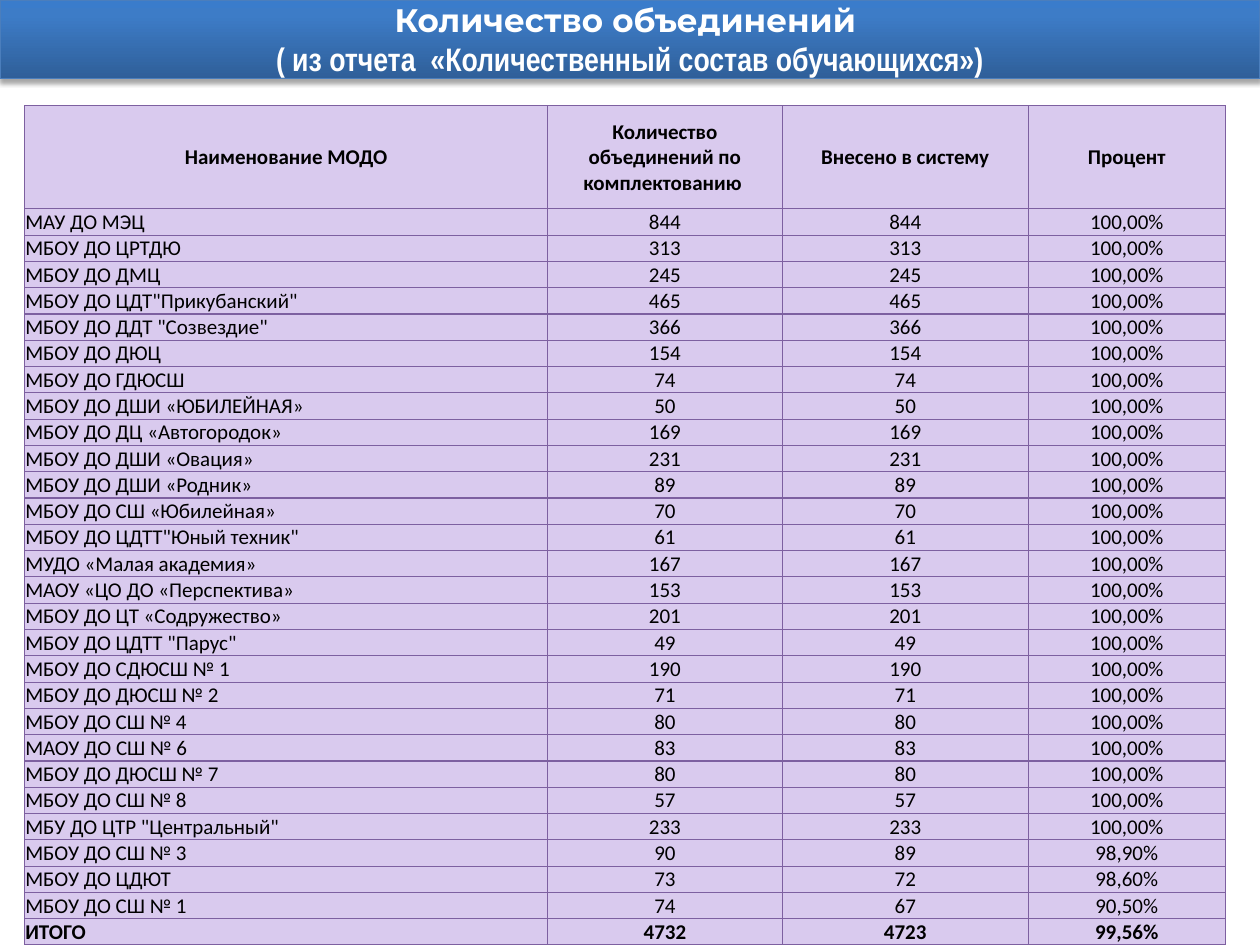
from typing import NamedTuple

from lxml import etree
from pptx import Presentation
from pptx.dml.color import RGBColor
from pptx.enum.text import MSO_ANCHOR, MSO_AUTO_SIZE, PP_ALIGN
from pptx.oxml import parse_xml
from pptx.oxml.ns import nsdecls, qn
from pptx.util import Cm, Pt

LEFT, CENTER = PP_ALIGN.LEFT, PP_ALIGN.CENTER
MIDDLE, BOTTOM = MSO_ANCHOR.MIDDLE, MSO_ANCHOR.BOTTOM
NO_AUTOFIT = MSO_AUTO_SIZE.NONE

WHITE = RGBColor(0xFF, 0xFF, 0xFF)
BLACK = RGBColor(0x00, 0x00, 0x00)
BANNER_LINE = RGBColor(0x4B, 0x7E, 0xBC)
BANNER_DARK = RGBColor(0x2F, 0x5F, 0x99)
BANNER_MID = RGBColor(0x3D, 0x7C, 0xC7)
BANNER_LIGHT = RGBColor(0x3A, 0x7C, 0xCB)
CELL_FILL = RGBColor(0xD9, 0xCA, 0xEE)
CELL_BORDER = RGBColor(0x7D, 0x60, 0xA0)

TITLE_LINES = [
    ("Количество объединений ", "Montserrat"),
    ("( из отчета  «Количественный состав обучающихся»)", "Arial Narrow"),
]
HEADERS = ("Наименование МОДО", "Количество объединений по комплектованию ",
           "Внесено в систему", "Процент")
COLUMN_WIDTHS = (10.54, 4.73, 4.96, 3.97)
HEADER_HEIGHT, ROW_HEIGHT = 2.08, 0.53


class Institution(NamedTuple):
    name: str
    planned: int
    entered: int
    percent: str = "100,00%"


def complete(name: str, count: int) -> Institution:
    """An institution whose groups have all been entered."""
    return Institution(name, count, count)


INSTITUTIONS = [
    complete("МАУ ДО МЭЦ", 844),
    complete("МБОУ ДО ЦРТДЮ", 313),
    complete("МБОУ ДО ДМЦ", 245),
    complete('МБОУ ДО ЦДТ"Прикубанский"', 465),
    complete('МБОУ ДО ДДТ "Созвездие"', 366),
    complete("МБОУ ДО ДЮЦ", 154),
    complete("МБОУ ДО ГДЮСШ", 74),
    complete("МБОУ ДО ДШИ «ЮБИЛЕЙНАЯ»", 50),
    complete("МБОУ ДО ДЦ «Автогородок»", 169),
    complete("МБОУ ДО ДШИ «Овация»", 231),
    complete("МБОУ ДО ДШИ «Родник»", 89),
    complete("МБОУ ДО СШ «Юбилейная»", 70),
    complete('МБОУ ДО ЦДТТ"Юный техник"', 61),
    complete("МУДО «Малая академия»", 167),
    complete("МАОУ «ЦО ДО «Перспектива»", 153),
    complete("МБОУ ДО ЦТ «Содружество»", 201),
    complete('МБОУ ДО ЦДТТ "Парус"', 49),
    complete("МБОУ ДО СДЮСШ № 1", 190),
    complete("МБОУ ДО ДЮСШ № 2", 71),
    complete("МБОУ ДО СШ № 4", 80),
    complete("МАОУ ДО СШ № 6", 83),
    complete("МБОУ ДО ДЮСШ № 7", 80),
    complete("МБОУ ДО СШ № 8", 57),
    complete('МБУ ДО ЦТР "Центральный"', 233),
    Institution("МБОУ ДО СШ № 3", 90, 89, "98,90%"),
    Institution("МБОУ ДО ЦДЮТ", 73, 72, "98,60%"),
    Institution("МБОУ ДО СШ № 1", 74, 67, "90,50%"),
]
TOTAL = Institution("ИТОГО", 4732, 4723, "99,56%")


def apply_format(target, values: dict) -> None:
    for attribute, value in values.items():
        setattr(target, attribute, value)


def write_run(paragraph, text: str, font_name: str, size: float,
              color: RGBColor, bold: bool) -> None:
    run = paragraph.add_run()
    run.text = text
    apply_format(run.font, {"name": font_name, "size": Pt(size), "bold": bold})
    run.font.color.rgb = color


def style_banner(banner) -> None:
    """Give the title its outline, gradient and soft shadow."""
    banner.line.color.rgb = BANNER_LINE
    banner.line.width = Pt(0.75)
    stops = "".join(
        f'<a:gs pos="{position * 1000}"><a:srgbClr val="{color}"/></a:gs>'
        for position, color in ((0, BANNER_DARK), (80, BANNER_MID), (100, BANNER_LIGHT)))
    properties = banner.element.spPr
    properties.find(qn("a:ln")).addprevious(parse_xml(
        f'<a:gradFill {nsdecls("a")} rotWithShape="1"><a:gsLst>{stops}</a:gsLst>'
        '<a:lin ang="16200000" scaled="0"/></a:gradFill>'))
    properties.append(parse_xml(
        f'<a:effectLst {nsdecls("a")}><a:outerShdw blurRad="{Pt(3.1)}" dist="{Pt(1.8)}" '
        'dir="5400000" rotWithShape="0"><a:srgbClr val="000000"><a:alpha val="35000"/>'
        '</a:srgbClr></a:outerShdw></a:effectLst>'))


def draw_title(title) -> None:
    apply_format(title, {"left": Cm(0), "top": Cm(0),
                         "width": Cm(25.4), "height": Cm(1.58)})
    style_banner(title)
    frame = title.text_frame
    apply_format(frame, {"auto_size": NO_AUTOFIT, "word_wrap": True,
                         "margin_top": Cm(0), "margin_bottom": Cm(0),
                         "vertical_anchor": MIDDLE})
    for index, (text, font_name) in enumerate(TITLE_LINES):
        paragraph = frame.add_paragraph() if index else frame.paragraphs[0]
        paragraph.alignment = CENTER
        write_run(paragraph, text, font_name, 18.6, WHITE, True)


def add_borders(cell) -> None:
    properties = cell._tc.get_or_add_tcPr()
    for position, side in enumerate(("lnL", "lnR", "lnT", "lnB")):
        border = etree.Element(qn(f"a:{side}"), w=str(Pt(0.75)))
        fill = etree.SubElement(border, qn("a:solidFill"))
        etree.SubElement(fill, qn("a:srgbClr"), val=str(CELL_BORDER))
        properties.insert(position, border)


def fill_cell(cell, text: str, alignment, anchor, bold: bool) -> None:
    apply_format(cell, {"margin_left": Cm(0.01), "margin_right": Cm(0.01),
                        "margin_top": Cm(0.01), "margin_bottom": Cm(0),
                        "vertical_anchor": anchor})
    cell.fill.solid()
    cell.fill.fore_color.rgb = CELL_FILL
    add_borders(cell)
    paragraph = cell.text_frame.paragraphs[0]
    paragraph.alignment = alignment
    write_run(paragraph, text, "Calibri", 12, BLACK, bold)


def draw_table(slide) -> None:
    rows = [HEADERS, *INSTITUTIONS, TOTAL]
    height = HEADER_HEIGHT + ROW_HEIGHT * (len(rows) - 1)
    table = slide.shapes.add_table(
        len(rows), len(HEADERS), Cm(0.5), Cm(2.13),
        Cm(sum(COLUMN_WIDTHS)), Cm(height)).table
    for column, width in zip(table.columns, COLUMN_WIDTHS):
        column.width = Cm(width)
    for row_index, values in enumerate(rows):
        is_header = row_index == 0
        table.rows[row_index].height = Cm(HEADER_HEIGHT if is_header else ROW_HEIGHT)
        for column_index, value in enumerate(values):
            fill_cell(table.cell(row_index, column_index), str(value),
                      CENTER if is_header or column_index else LEFT,
                      MIDDLE if is_header else BOTTOM,
                      is_header or values is TOTAL)


def main() -> None:
    presentation = Presentation()
    apply_format(presentation, {"slide_width": Cm(25.4), "slide_height": Cm(19.05)})
    title_only = presentation.slide_layouts[5]
    slide = presentation.slides.add_slide(title_only)
    # Banner with the report title
    draw_title(slide.shapes.title)
    # Number of groups by institution
    draw_table(slide)
    presentation.save("out.pptx")


if __name__ == "__main__":
    main()
